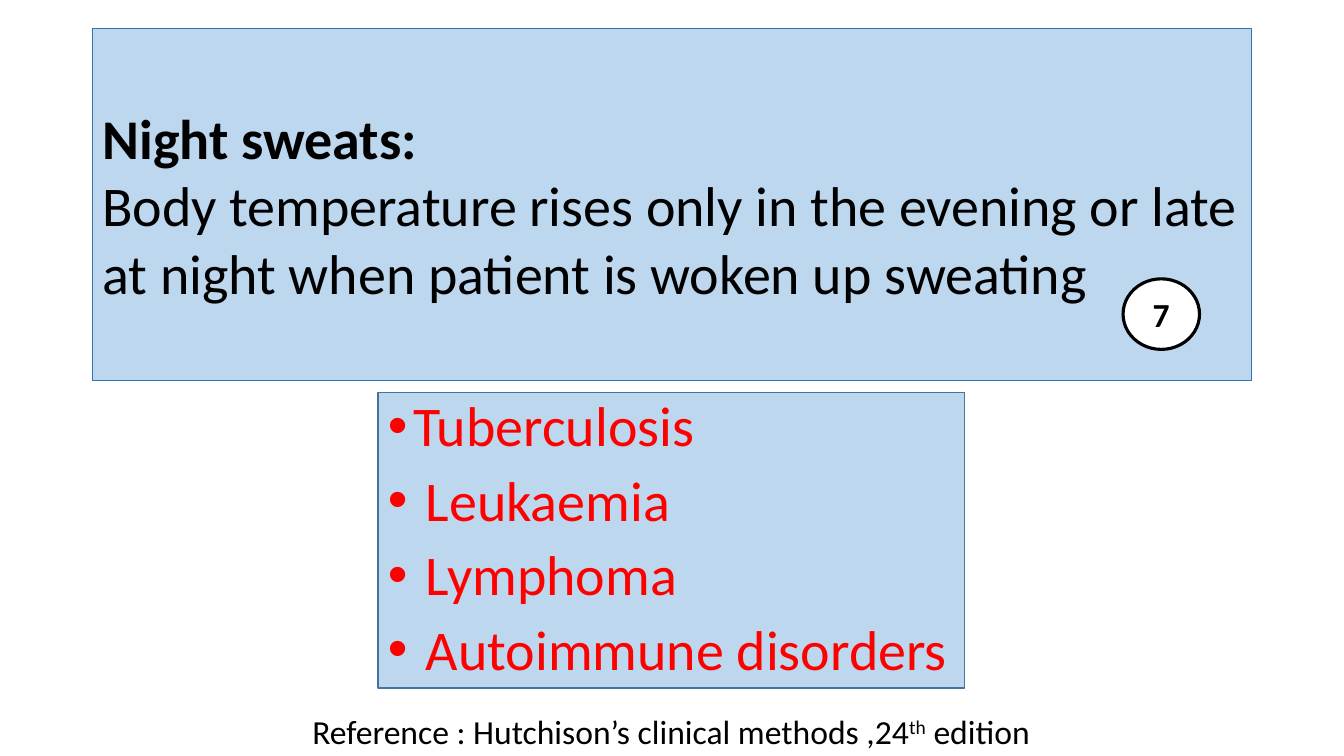
import dataclasses

import lxml.etree
import pptx
import pptx.dml.color
import pptx.enum.shapes
import pptx.enum.text
import pptx.oxml.ns
import pptx.util

ALIGN = pptx.enum.text.PP_ALIGN
SHAPE = pptx.enum.shapes.MSO_SHAPE


@dataclasses.dataclass(frozen=True)
class Theme:
    """Hold the colours, font and type sizes of the slide."""

    font: str = "Calibri"
    pale: str = "BDD7EE"
    edge: str = "2E75B6"
    rim: str = "43739E"
    ink: str = "000000"
    paper: str = "FFFFFF"
    alert: str = "FF0000"
    large: int = 40
    small: int = 24


class Deck:
    """Draw elements on a slide with a grid of 160 columns and 90 rows."""

    def __init__(self, theme):
        """Open a blank wide deck with one title-only slide."""
        self.theme = theme
        self.file = pptx.Presentation()
        self.file.slide_width = pptx.util.Inches(13.33)
        self.file.slide_height = pptx.util.Inches(7.5)
        self.slide = self.file.slides.add_slide(self.file.slide_layouts[5])

    def place(self, col, row, wide, high):
        """Turn grid units into lengths."""
        x = self.file.slide_width / 160
        y = self.file.slide_height / 90
        return [round(n) for n in (col * x, row * y, wide * x, high * y)]

    def color(self, code):
        """Turn a hex code into a colour."""
        return pptx.dml.color.RGBColor.from_string(code)

    def paint(self, shape, fill, line, width):
        """Give a shape its fill and outline."""
        shape.fill.solid()
        shape.fill.fore_color.rgb = self.color(fill)
        shape.line.color.rgb = self.color(line)
        shape.line.width = pptx.util.Pt(width)

    def style(self, run, size, color):
        """Format one run of text."""
        run.font.name = self.theme.font
        run.font.size = pptx.util.Pt(size)
        run.font.color.rgb = self.color(color)

    def label(self, shape, lines, size, color, align=ALIGN.LEFT, wrap=True):
        """Set and format the text of a shape."""
        frame = shape.text_frame
        frame.text = "\n".join(lines)
        frame.word_wrap = wrap
        frame.auto_size = pptx.enum.text.MSO_AUTO_SIZE.NONE
        frame.vertical_anchor = pptx.enum.text.MSO_ANCHOR.MIDDLE
        for para in frame.paragraphs:
            para.alignment = align
            for run in para.runs:
                self.style(run, size, color)
        return frame.paragraphs

    def title(self, area, lines):
        """Fill the title panel, with its first line bold."""
        shape = self.slide.shapes.title
        shape.left, shape.top, shape.width, shape.height = self.place(*area)
        self.paint(shape, self.theme.pale, self.theme.edge, 1)
        paras = self.label(shape, lines, self.theme.large, self.theme.ink)
        paras[0].runs[0].font.bold = True

    def shape(self, kind, area, fill, line, width):
        """Add a flat preset shape."""
        shape = self.slide.shapes.add_shape(kind, *self.place(*area))
        shape.shadow.inherit = False
        self.paint(shape, fill, line, width)
        return shape

    def badge(self, area, text):
        """Add a round number badge."""
        look = self.theme
        shape = self.shape(SHAPE.OVAL, area, look.paper, look.ink, 2.25)
        paras = self.label(shape, [text], look.small, look.ink, ALIGN.CENTER, False)
        paras[0].runs[0].font.bold = True

    def bullets(self, area, items):
        """Add a panel with a bulleted list."""
        look = self.theme
        shape = self.shape(SHAPE.RECTANGLE, area, look.pale, look.rim, 1)
        paras = self.label(shape, items, look.large, look.alert)
        for index, para in enumerate(paras):
            para.line_spacing = 0.9
            para.space_before = pptx.util.Pt(10 if index else 0)
            props = para._p.get_or_add_pPr()
            props.set("marL", str(pptx.util.Inches(0.25)))
            props.set("indent", str(pptx.util.Inches(-0.25)))
            for tag, key, value in (("a:buFont", "typeface", "Arial"), ("a:buChar", "char", "•")):
                name = pptx.oxml.ns.qn(tag)
                lxml.etree.SubElement(props, name).set(key, value)

    def note(self, area, head, mark, tail):
        """Add a line of text with a superscript mark inside."""
        look = self.theme
        box = self.slide.shapes.add_textbox(*self.place(*area))
        para = self.label(box, [head], look.small, look.ink)[0]
        for text in (mark, tail):
            run = para.add_run()
            run.text = text
            self.style(run, look.small, look.ink)
        para.runs[1]._r.get_or_add_rPr().set("baseline", "30000")


def main():
    """Build the slide on night sweats."""
    deck = Deck(Theme())
    deck.title((11, 3.4, 138, 41.9), [
        "Night sweats:",
        "Body temperature rises only in the evening or late at night "
        "when patient is woken up sweating",
    ])
    deck.badge((133.7, 33.2, 9.1, 8.4), "7")
    deck.bullets((45, 46.7, 69.8, 35.2), [
        "Tuberculosis", " Leukaemia", " Lymphoma", " Autoimmune disorders",
    ])
    deck.note((36, 84, 88.4, 6), "Reference : Hutchison’s clinical methods ,24", "th", " edition")
    deck.file.save("out.pptx")


if __name__ == "__main__":
    main()
